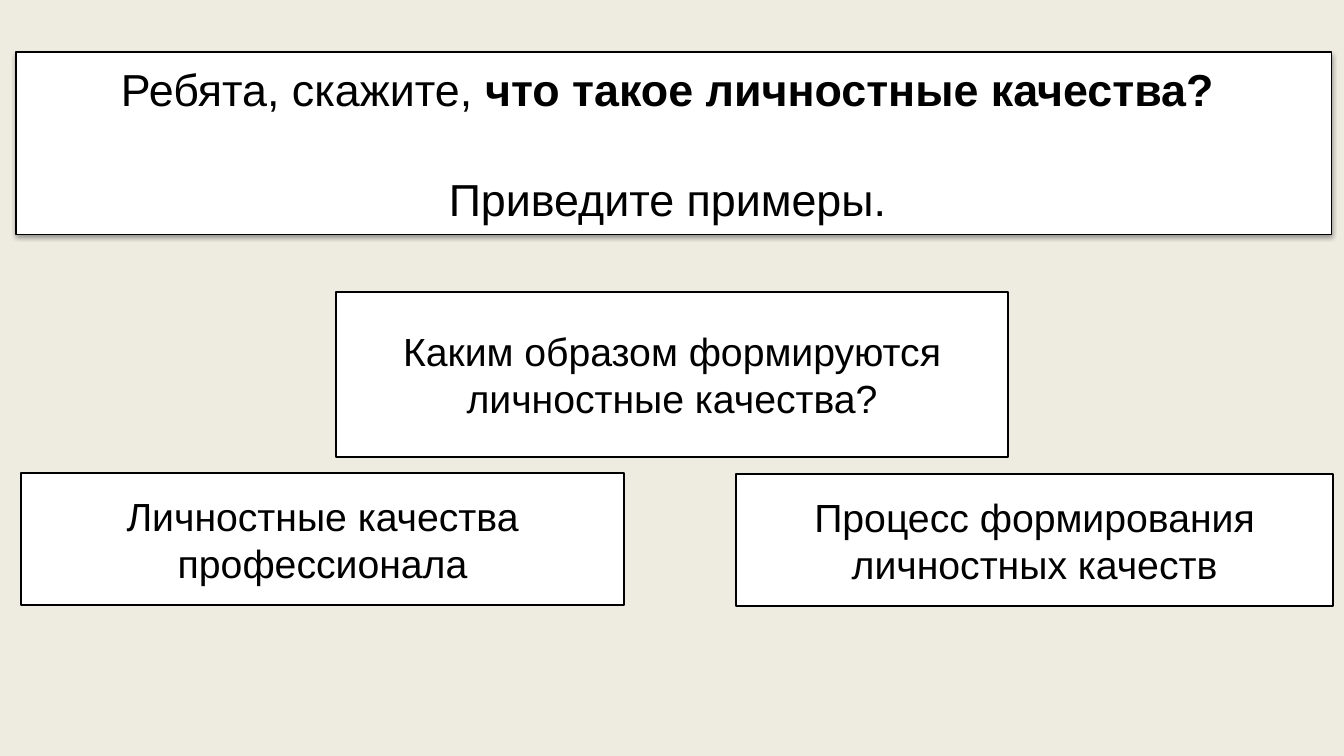
import pptx
import pptx.dml.color
import pptx.enum.shapes
import pptx.enum.text
import pptx.oxml
import pptx.oxml.ns
import pptx.util

EMU_PER_PX = 914400 / 100.8


def px(n):
    return pptx.util.Emu(round(n * EMU_PER_PX))


def rgb(value):
    return pptx.dml.color.RGBColor.from_string(value)


class QuestionSlide:
    FONT = "Arial"
    PAPER, INK, BACKGROUND = "FFFFFF", "000000", "EEECE1"

    def __init__(self, prs):
        self.s = prs.slides.add_slide(prs.slide_layouts[5])
        fill = self.s.background.fill
        fill.solid()
        fill.fore_color.rgb = rgb(self.BACKGROUND)

    def style(self, sp, line_pt, size):
        """Give a filled shape its white panel look and centred black text."""
        sp.shadow.inherit = False
        sp.fill.solid()
        sp.fill.fore_color.rgb = rgb(self.PAPER)
        sp.line.color.rgb = rgb(self.INK)
        sp.line.width = pptx.util.Pt(line_pt)
        tf = sp.text_frame
        tf.word_wrap = True
        tf.auto_size = pptx.enum.text.MSO_AUTO_SIZE.NONE
        tf.vertical_anchor = pptx.enum.text.MSO_ANCHOR.MIDDLE
        for p in tf.paragraphs:
            p.alignment = pptx.enum.text.PP_ALIGN.CENTER
            for r in p.runs:
                r.font.name = self.FONT
                r.font.size = pptx.util.Pt(size)
                r.font.color.rgb = rgb(self.INK)

    def drop_shadow(self, sp):
        effects = sp._element.spPr.find(pptx.oxml.ns.qn("a:effectLst"))
        effects.append(pptx.oxml.parse_xml(
            f'<a:outerShdw {pptx.oxml.ns.nsdecls("a")} blurRad="39370" '
            'dist="20320" dir="5400000" rotWithShape="0">'
            f'<a:srgbClr val="{self.INK}"><a:alpha val="38000"/></a:srgbClr>'
            '</a:outerShdw>'))

    def title(self, x, y, w, h, lead, question, request):
        sp = self.s.shapes.title
        sp.left, sp.top, sp.width, sp.height = map(px, (x, y, w, h))
        tf = sp.text_frame
        tf.text = lead
        r = tf.paragraphs[0].add_run()
        r.text = question
        r.font.bold = True
        p = tf.add_paragraph()
        p.text = request
        p.space_before = pptx.util.Pt(40)
        self.style(sp, 0.75, 32)
        self.drop_shadow(sp)

    def box(self, x, y, w, h, text):
        sp = self.s.shapes.add_shape(
            pptx.enum.shapes.MSO_SHAPE.RECTANGLE, *map(px, (x, y, w, h)))
        sp.text_frame.text = text
        self.style(sp, 2, 28)


def main():
    prs = pptx.Presentation()
    prs.slide_width, prs.slide_height = px(1344), px(756)
    slide = QuestionSlide(prs)
    slide.title(16, 52, 1316, 183, "Ребята, скажите, ",
                "что такое личностные качества? ", "Приведите примеры. ")
    slide.box(336, 292, 672, 165,
              "Каким образом формируются личностные качества?")
    slide.box(21, 473, 603, 132, "Личностные качества профессионала")
    slide.box(736, 474, 597, 132, "Процесс формирования личностных качеств")
    prs.save("out.pptx")


if __name__ == "__main__":
    main()
